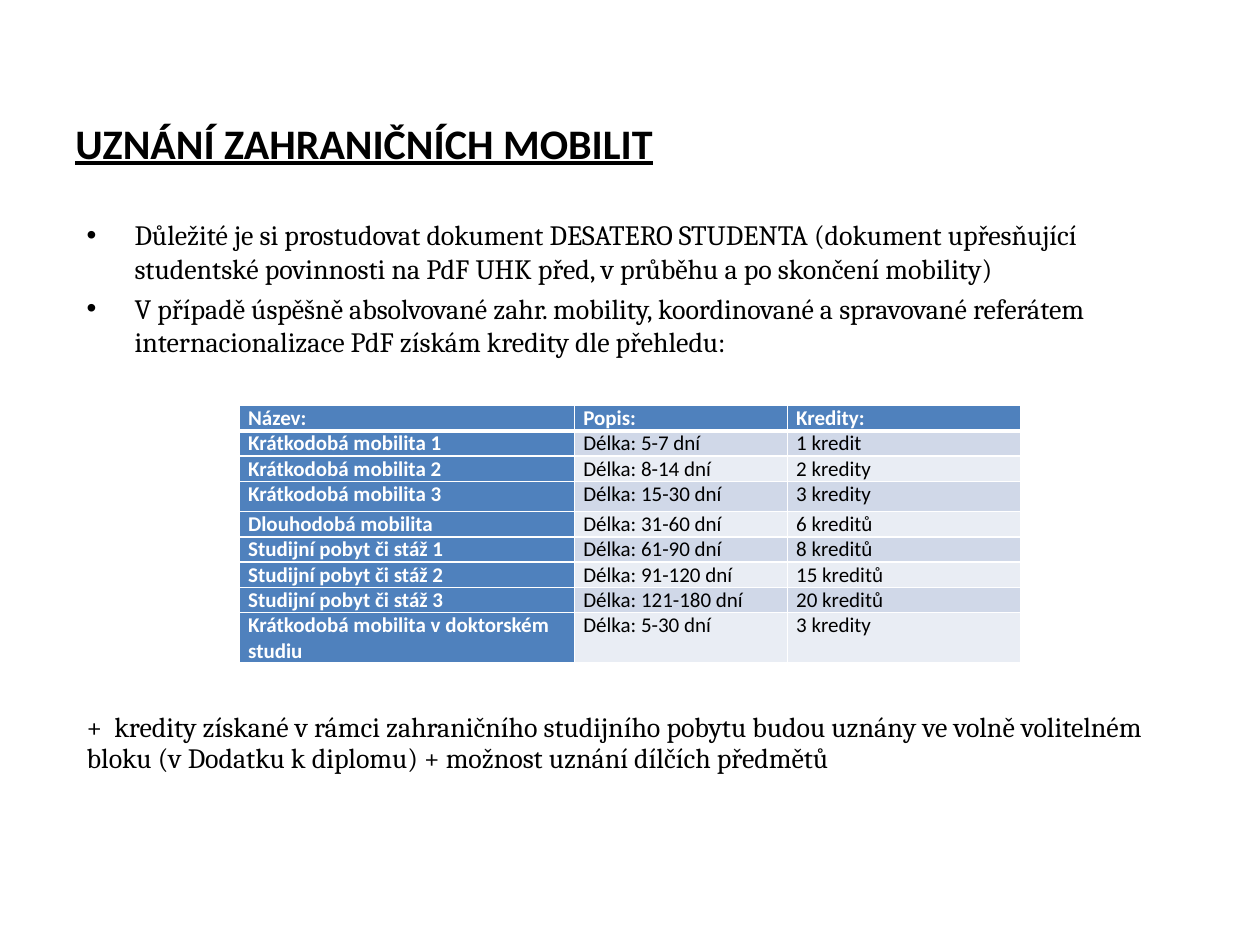
from dataclasses import dataclass

from lxml import etree
from pptx import Presentation
from pptx.dml.color import RGBColor
from pptx.enum import text as t
from pptx.oxml import ns
from pptx.util import Inches, Pt


@dataclass(frozen=True)
class Theme:
    ink: str = "000000"
    paper: str = "FFFFFF"
    head: str = "4F81BD"
    bands: tuple = ("D0D8E8", "E9EDF4")
    sans: str = "Calibri"
    serif: str = "Cambria"
    title: int = 24
    body: int = 16
    cell: int = 12


@dataclass(frozen=True)
class Credit:
    name: str
    span: str
    gain: str


THEME = Theme()
TITLE = "UZNÁNÍ ZAHRANIČNÍCH MOBILIT"
POINTS = (
    "Důležité je si prostudovat dokument DESATERO STUDENTA (dokument upřesňující "
    "studentské povinnosti na PdF UHK před, v průběhu a po skončení mobility)",
    "V případě úspěšně absolvované zahr. mobility, koordinované a spravované "
    "referátem internacionalizace PdF získám kredity dle přehledu:",
)
NOTE = ("+  kredity získané v rámci zahraničního studijního pobytu budou uznány ve "
        "volně volitelném bloku (v Dodatku k diplomu) + možnost uznání dílčích předmětů")
CREDITS = (
    Credit("Název:", "Popis:", "Kredity:"),
    Credit("Krátkodobá mobilita 1", "Délka: 5-7 dní", "1 kredit"),
    Credit("Krátkodobá mobilita 2", "Délka: 8-14 dní", "2 kredity"),
    Credit("Krátkodobá mobilita 3", "Délka: 15-30 dní", "3 kredity"),
    Credit("Dlouhodobá mobilita", "Délka: 31-60 dní", "6 kreditů"),
    Credit("Studijní pobyt či stáž 1", "Délka: 61-90 dní", "8 kreditů"),
    Credit("Studijní pobyt či stáž 2", "Délka: 91-120 dní", "15 kreditů"),
    Credit("Studijní pobyt či stáž 3", "Délka: 121-180 dní", "20 kreditů"),
    Credit("Krátkodobá mobilita v doktorském studiu", "Délka: 5-30 dní", "3 kredity"),
)
WIDTHS = (2.66, 1.69, 1.85)
ROW, TALL, LAST = 0.2, 0.24, 0.4


def style(para, face: str, size: int, color: str, bold: bool = False) -> None:
    for run in para.runs:
        font = run.font
        font.name, font.size, font.bold = face, Pt(size), bold
        font.color.rgb = RGBColor.from_string(color)


def add_box(slide, left: float, top: float, width: float, height: float):
    frame = slide.shapes.add_textbox(
        Inches(left), Inches(top), Inches(width), Inches(height)).text_frame
    frame.word_wrap = True
    return frame


def add_bullet(para) -> None:
    props = para._p.get_or_add_pPr()
    props.set("marL", str(Inches(0.38)))
    props.set("indent", str(-Inches(0.38)))
    etree.SubElement(props, ns.qn("a:buFont"), typeface="Arial")
    etree.SubElement(props, ns.qn("a:buChar"), char="•")


def add_edges(cell, base: int) -> None:
    """Draw white cell borders, with the bottom one base points wide."""
    props = cell._tc.get_or_add_tcPr()
    for i, (side, width) in enumerate((("L", 1), ("R", 1), ("T", 1), ("B", base))):
        line = etree.Element(ns.qn(f"a:ln{side}"), w=str(Pt(width)))
        fill = etree.SubElement(line, ns.qn("a:solidFill"))
        etree.SubElement(fill, ns.qn("a:srgbClr"), val=THEME.paper)
        props.insert(i, line)


def add_title(slide) -> None:
    frame = add_box(slide, 0.5, 0.3, 9, 1.25)
    frame.vertical_anchor = t.MSO_ANCHOR.BOTTOM
    frame.margin_bottom = Inches(0.22)
    frame.text = TITLE
    para = frame.paragraphs[0]
    style(para, THEME.sans, THEME.title, THEME.ink, True)
    para.runs[0].font.underline = True


def add_body(slide) -> None:
    frame = add_box(slide, 0.59, 1.68, 9, 4.98)
    frame.text = "\n".join((*POINTS, NOTE))
    *points, note = frame.paragraphs
    for para in points:
        para.space_before = Pt(3.5)
        add_bullet(para)
    note.line_spacing = 0.9
    note.space_before = Inches(2.82)  # leaves room for the table
    for para in frame.paragraphs:
        style(para, THEME.serif, THEME.body, THEME.ink)


def fill_cell(cell, words: str, row: int, col: int) -> None:
    strong = row == 0 or col == 0
    cell.text = words
    cell.margin_left = cell.margin_right = Inches(0.07)
    cell.margin_top = cell.margin_bottom = 0
    cell.fill.solid()
    cell.fill.fore_color.rgb = RGBColor.from_string(
        THEME.head if strong else THEME.bands[(row - 1) % 2])
    style(cell.text_frame.paragraphs[0], THEME.sans, THEME.cell,
          THEME.paper if strong else THEME.ink, strong)
    add_edges(cell, 1 if row else 3)


def add_credits(slide) -> None:
    heights = [ROW] * len(CREDITS)
    heights[3], heights[-1] = TALL, LAST
    table = slide.shapes.add_table(
        len(CREDITS), len(WIDTHS), Inches(1.9), Inches(3.22),
        Inches(sum(WIDTHS)), Inches(sum(heights))).table
    table.first_col = True
    for col, width in zip(table.columns, WIDTHS):
        col.width = Inches(width)
    for r, (item, height) in enumerate(zip(CREDITS, heights)):
        table.rows[r].height = Inches(height)
        for c, words in enumerate((item.name, item.span, item.gain)):
            fill_cell(table.cell(r, c), words, r, c)


def main() -> None:
    deck = Presentation()
    deck.slide_width, deck.slide_height = Inches(10), Inches(7.5)
    slide = deck.slides.add_slide(deck.slide_layouts[6])
    add_body(slide)
    add_title(slide)
    add_credits(slide)
    deck.save("out.pptx")


if __name__ == "__main__":
    main()
